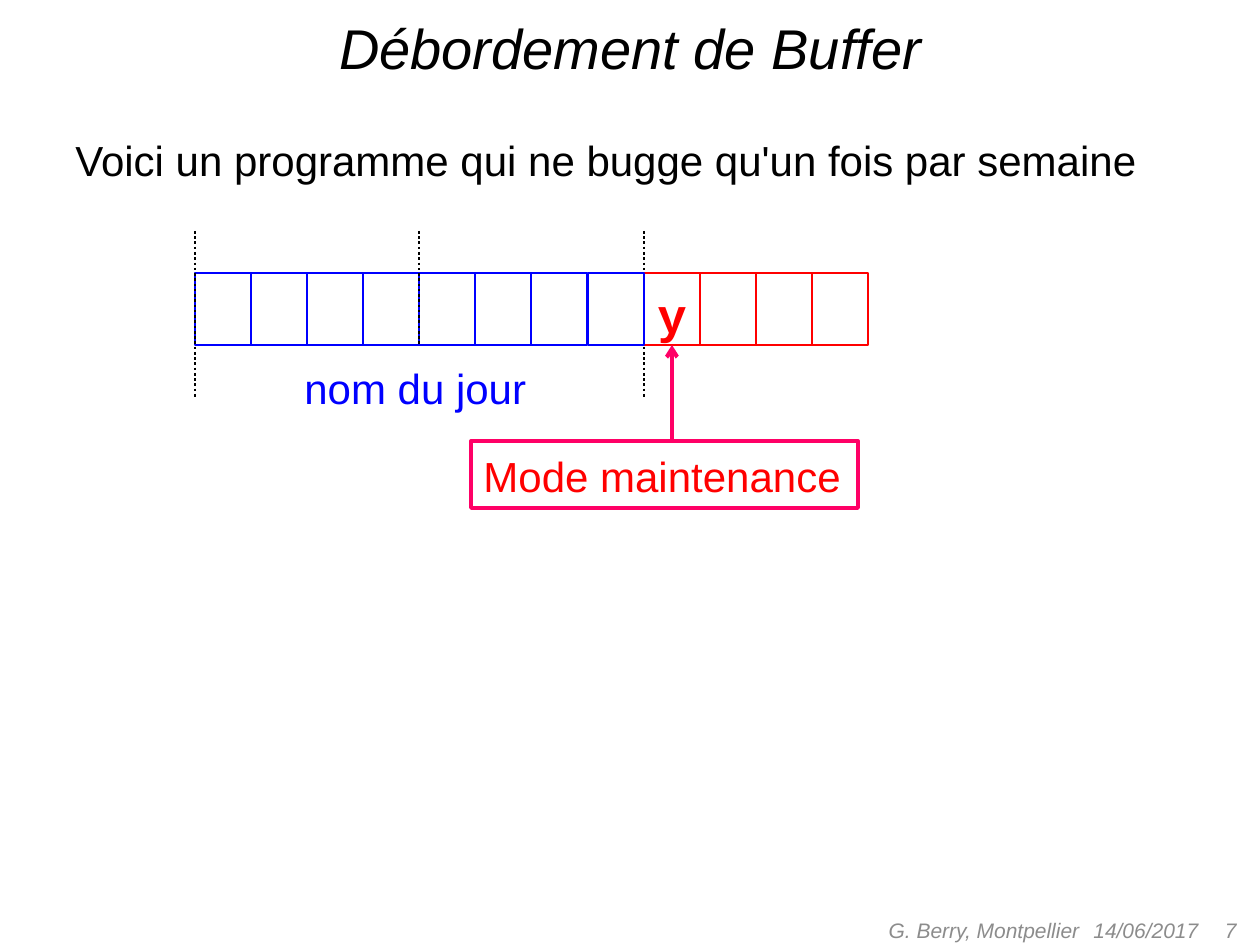
from lxml.etree import SubElement
from pptx import Presentation
from pptx.dml.color import RGBColor
from pptx.enum.dml import MSO_LINE_DASH_STYLE as Dash
from pptx.enum.shapes import MSO_CONNECTOR as Connector, MSO_SHAPE as Shape
from pptx.enum.text import MSO_ANCHOR as Anchor, MSO_AUTO_SIZE as AutoSize, PP_ALIGN as Align
from pptx.oxml.ns import qn
from pptx.util import Pt

PX = 914400 // 126
COLORS = {"ink": "000000", "day": "0000FF", "mode": "FF0000",
          "callout": "FF0066", "footer": "8C8C8C", "paper": "FFFFFF"}
BODY = {"size": Pt(24), "name": "Arial"}
BODY_PARAGRAPH = {"line_spacing": 1.05}


def emu(*lengths):
    return [length * PX for length in lengths]


def rgb(color):
    return RGBColor.from_string(COLORS[color])


def apply(target, formats):
    for key, value in formats.items():
        setattr(target, key, value)


def write(shape, text, color, font, paragraph=None, frame=None):
    apply(shape.text_frame, {"word_wrap": True, "vertical_anchor": Anchor.TOP, **(frame or {})})
    line = shape.text_frame.paragraphs[0]
    apply(line, {"alignment": Align.LEFT, **(paragraph or {})})
    run = line.add_run()
    run.text = text
    apply(run.font, font)
    run.font.color.rgb = rgb(color)


def add_text(shapes, box, *content, **formats):
    write(shapes.add_textbox(*emu(*box)), *content, **formats)


def add_box(shapes, box, line=None, width=1.5, fill=None):
    shape = shapes.add_shape(Shape.RECTANGLE, *emu(*box))
    shape.shadow.inherit = False
    for part, color in ((shape.fill, fill), (shape.line.fill, line)):
        if color:
            part.solid()
            part.fore_color.rgb = rgb(color)
        else:
            part.background()
    if line:
        shape.line.width = Pt(width)
    return shape


def add_line(shapes, start, end, color, width, dash=None, arrow=False):
    line = shapes.add_connector(Connector.STRAIGHT, *emu(*start, *end))
    line.line.color.rgb = rgb(color)
    apply(line.line, {"width": Pt(width), "dash_style": dash})
    properties = line._element.spPr
    if arrow:
        SubElement(line.line._get_or_add_ln(), qn("a:tailEnd"), type="arrow")
    SubElement(properties, qn("a:effectLst"))


def title(slide, box):
    heading = slide.shapes.title
    apply(heading, dict(zip(("left", "top", "width", "height"), emu(*box))))
    write(heading, "Débordement de Buffer", "ink",
          {"size": Pt(32), "name": "Arial", "italic": True},
          {"alignment": Align.CENTER},
          {"vertical_anchor": Anchor.BOTTOM, "auto_size": AutoSize.SHAPE_TO_FIT_TEXT})


def intro(shapes, box):
    add_text(shapes, box, "Voici un programme qui ne bugge qu'un fois par semaine",
             "ink", BODY, {**BODY_PARAGRAPH, "space_before": Pt(6)})


def buffer(slide, box):
    left, top, width, height = box
    day_cells, all_cells = 8, 12
    edges = [left + round(i * width / all_cells) for i in range(all_cells + 1)]
    mode_group = slide.shapes.add_group_shape().shapes

    # Cells: the day name, then the mode that follows it in memory
    cells = []
    for i in range(all_cells):
        owner, color = (slide.shapes, "day") if i < day_cells else (mode_group, "mode")
        cells.append(add_box(owner, (edges[i], top, 56, height), color))
    write(cells[day_cells], "y", "mode",
          {"size": Pt(28), "name": "Courier New", "bold": True},
          {"alignment": Align.CENTER}, {"word_wrap": False, "margin_top": 12 * PX})

    # Word boundaries
    for i, drop in ((0, 54), (4, 0), (day_cells, 54)):
        owner = mode_group if i == day_cells else slide.shapes
        add_line(owner, (edges[i], top - 42), (edges[i], top + height + drop),
                 "ink", 1.5, Dash.ROUND_DOT)

    # Label under the day cells
    label = add_box(slide.shapes, (left + 97, top + 81, 249, 66), fill="paper")
    write(label, "nom du jour", "day", BODY, BODY_PARAGRAPH, {"word_wrap": False})


def maintenance(shapes, box, arrow_height):
    left, top, width, height = box
    callout = add_box(shapes, box, "callout", 2.25)
    write(callout, "Mode maintenance", "mode", BODY, BODY_PARAGRAPH,
          {"word_wrap": False, "vertical_anchor": Anchor.MIDDLE})
    middle = left + 201
    add_line(shapes, (middle, top + 1), (middle, top - arrow_height),
             "callout", 2.25, arrow=True)


def footer(shapes, box):
    left, top, width, height = box
    parts = (("14/06/2017", 441, 294, Align.LEFT),
             ("G. Berry, Montpellier", 0, 452, Align.RIGHT),
             (" 7", 315, 294, Align.RIGHT))
    for text, offset, part_width, alignment in parts:
        add_text(shapes, (left + offset, top, part_width, height), text, "footer",
                 {"size": Pt(12), "name": "Arial", "italic": True},
                 {"alignment": alignment}, {"vertical_anchor": Anchor.MIDDLE})


def main():
    deck = Presentation()
    apply(deck, dict(zip(("slide_width", "slide_height"), emu(1260, 945))))
    slide = deck.slides.add_slide(deck.slide_layouts[5])
    title(slide, (32, 6, 1197, 81))
    buffer(slide, (195, 273, 673, 72))
    footer(slide.shapes, (640, 905, 609, 50))
    intro(slide.shapes, (63, 126, 1134, 66))
    maintenance(slide.shapes, (471, 441, 387, 67), 96)
    deck.save("out.pptx")


if __name__ == "__main__":
    main()
